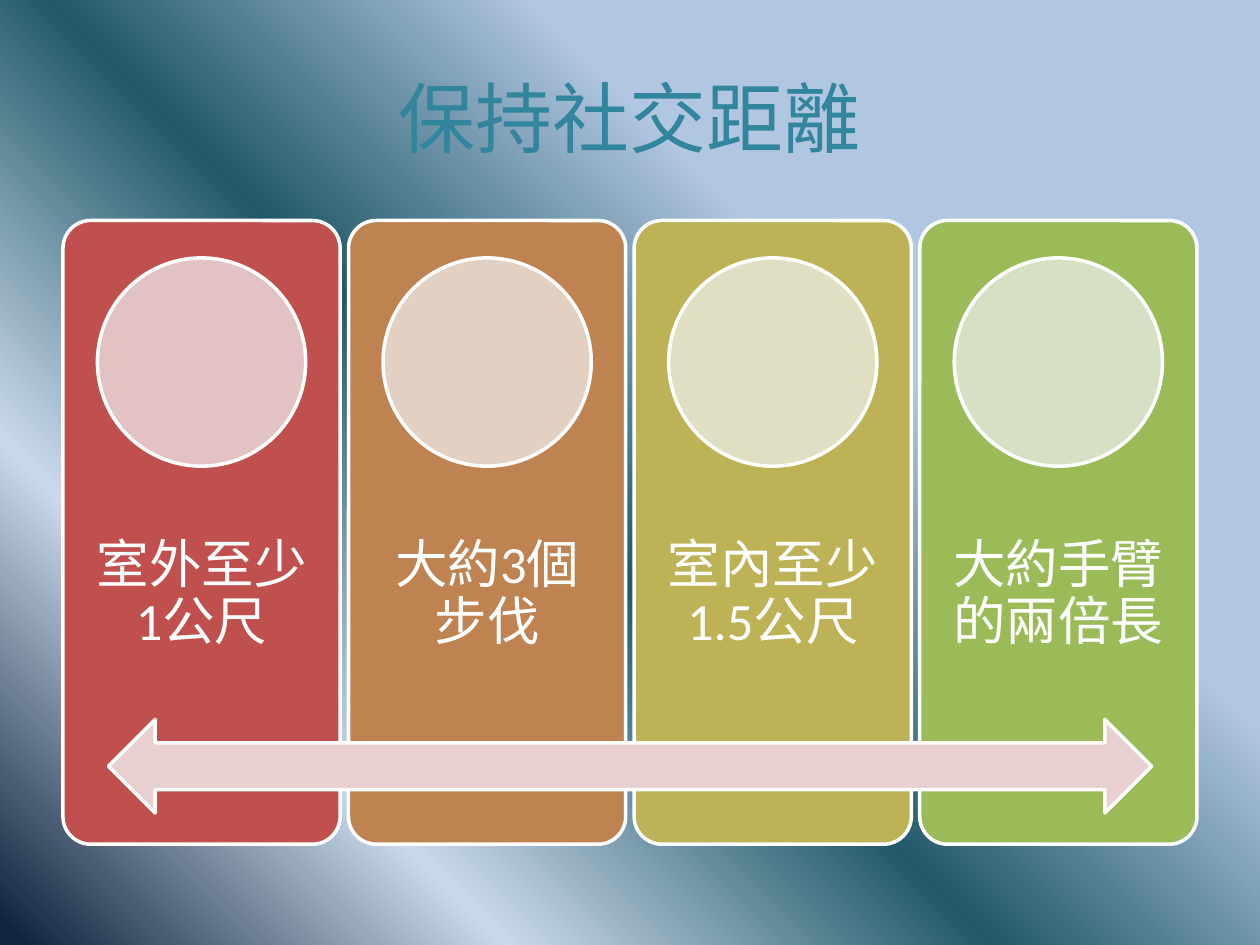
from lxml.etree import SubElement
from pptx import Presentation
from pptx.dml.color import RGBColor as RGB
from pptx.enum.shapes import MSO_SHAPE as SHAPE
from pptx.enum.text import MSO_ANCHOR as ANCHOR, PP_ALIGN as ALIGN
from pptx.oxml.ns import qn
from pptx.util import Pt

COLORS = {"title": "31859C", "white": "FFFFFF", "arrow": "E8D0D0"}
BACKDROP = [(0, "B0C6E1"), (33, "B1C6E1"), (55, "215968"), (77, "CAD9EB"), (99, "0F243E")]
CARDS = [
    ("室外至少1公尺", "C0504D", "E2C2C2"),
    ("大約3個步伐", "BE8351", "E2D1C2"),
    ("室內至少1.5公尺", "BDB255", "E1DFC3"),
    ("大約手臂的兩倍長", "9BBB59", "D5E0C4"),
]
CJK = "Noto Sans CJK SC"


def write(tf, text, size=30, font="Calibri", color=COLORS["white"], inset=16.5, spacing=0.9, after=10.5):
    tf.word_wrap = True
    tf.vertical_anchor = ANCHOR.MIDDLE
    tf.margin_left = tf.margin_right = tf.margin_top = tf.margin_bottom = Pt(inset)
    p = tf.paragraphs[0]
    p.alignment, p.line_spacing, p.space_after = ALIGN.CENTER, spacing, Pt(after)
    r = p.add_run()
    r.text = text
    r.font.size, r.font.name = Pt(size), font
    r.font.color.rgb = RGB.from_string(color)
    SubElement(r.font._element, qn("a:ea")).set("typeface", CJK)


class Deck:
    """Hold the style and the current slide."""

    def __init__(self, prs):
        self.s = prs.slides.add_slide(prs.slide_layouts[6])
        self.outline, self.weight = COLORS["white"], 2

    def backdrop(self, stops, angle):
        fill = self.s.background.fill
        fill.gradient()
        fill.gradient_angle = angle
        stop_list = self.s._element.find(".//" + qn("a:gsLst"))
        for old in list(stop_list):
            stop_list.remove(old)
        for pos, color in stops:
            gs = SubElement(stop_list, qn("a:gs"), pos=str(pos * 1000))
            SubElement(gs, qn("a:srgbClr"), val=color)

    def shape(self, kind, x, y, w, h, color, adj=None):
        sp = self.s.shapes.add_shape(kind, Pt(x), Pt(y), Pt(w), Pt(h))
        sp.shadow.inherit = False
        sp.fill.solid()
        sp.fill.fore_color.rgb = RGB.from_string(color)
        sp.line.color.rgb = RGB.from_string(self.outline)
        sp.line.width = Pt(self.weight)
        if adj is not None:
            sp.adjustments[0] = adj

    def text(self, x, y, w, h, text, **style):
        sp = self.s.shapes.add_textbox(Pt(x), Pt(y), Pt(w), Pt(h))
        write(sp.text_frame, text, **style)


def main():
    prs = Presentation()
    prs.slide_width, prs.slide_height = Pt(720), Pt(540)
    deck = Deck(prs)
    deck.backdrop(BACKDROP, 225)
    deck.text(36, 21.6, 648, 90, "保持社交距離", size=44, font=CJK,
              color=COLORS["title"], inset=3.6, spacing=1, after=0)

    left, width, pitch, disc = 36, 158.4, 163.2, 119
    for i, (label, card_color, disc_color) in enumerate(CARDS):
        x = left + i * pitch
        deck.shape(SHAPE.ROUNDED_RECTANGLE, x, 126, width, 356.4, card_color, adj=0.1)
        deck.text(x, 268.6, width, 142.6, label)
        deck.shape(SHAPE.OVAL, x + (width - disc) / 2, 147.4, disc, disc, disc_color)
    deck.shape(SHAPE.LEFT_RIGHT_ARROW, 61.9, 411.1, 596.2, 53.5, COLORS["arrow"])
    prs.save("out.pptx")


if __name__ == "__main__":
    main()
